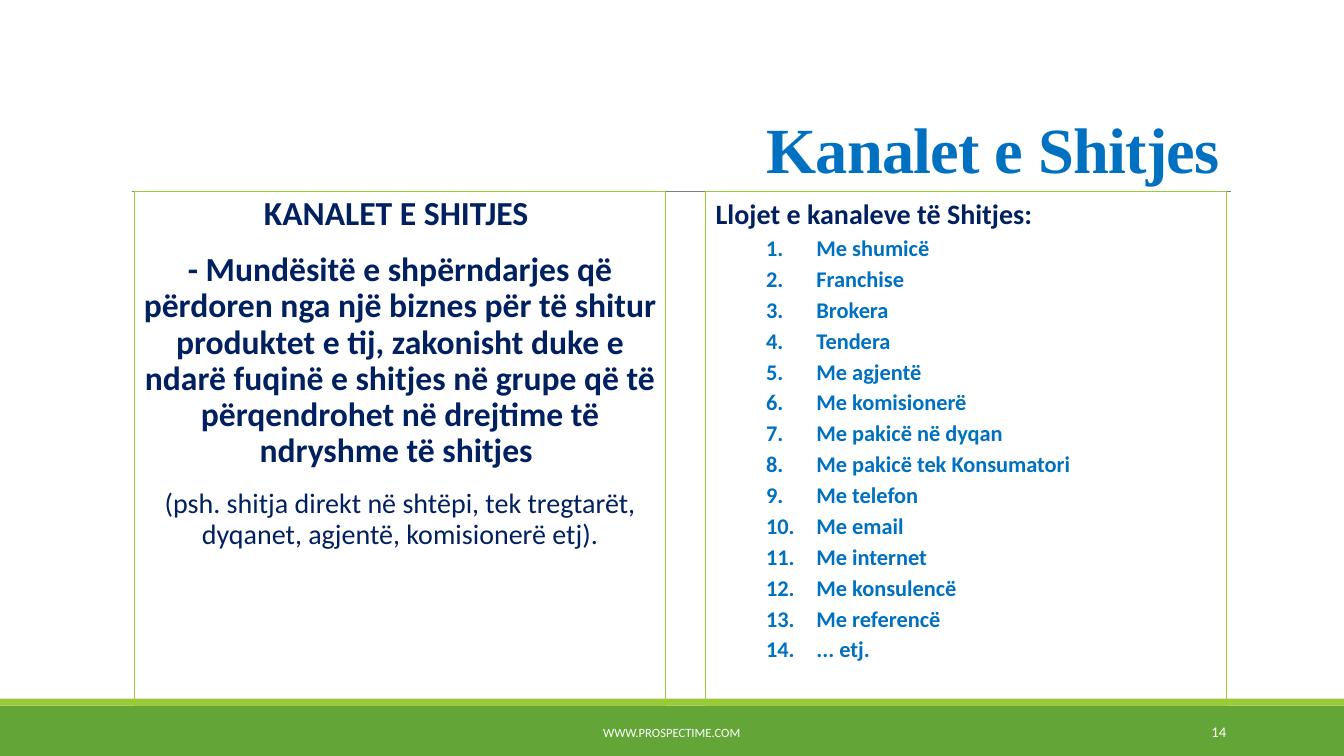
from dataclasses import dataclass
from typing import Optional

from lxml.etree import SubElement
from pptx import Presentation
from pptx.dml.color import RGBColor
from pptx.enum.shapes import MSO_CONNECTOR, MSO_SHAPE
from pptx.enum.text import MSO_ANCHOR, MSO_AUTO_SIZE, PP_ALIGN
from pptx.oxml.ns import qn
from pptx.util import Pt


@dataclass(frozen=True)
class Theme:
    white: str = "FFFFFF"
    green: str = "63A537"
    lime: str = "99CB38"
    gray: str = "808080"
    blue: str = "0070C0"
    navy: str = "002060"
    sans: str = "Calibri"
    serif: str = "Times New Roman"
    title: float = 46
    lead: float = 24
    body: float = 20
    item: float = 16
    page: float = 10.5
    foot: float = 9


@dataclass(frozen=True)
class Box:
    left: float
    top: float
    width: float
    height: float


@dataclass(frozen=True)
class Band:
    box: Box
    color: str


@dataclass(frozen=True)
class Para:
    text: str
    size: float
    color: str
    bold: bool = False
    align: PP_ALIGN = PP_ALIGN.LEFT
    font: str = Theme.sans
    line: float = 1.0
    before: float = 0
    after: float = 0
    number: bool = False


@dataclass(frozen=True)
class Note:
    box: Box
    para: Para


THEME = Theme()
WIDTH, HEIGHT = 960, 540
BANDS = [
    Band(Box(0, 504, WIDTH, 36), THEME.green),
    Band(Box(0, 499, WIDTH, 5), THEME.lime),
]
HEAD = Para("Kanalet e Shitjes", THEME.title, THEME.blue, True,
            PP_ALIGN.RIGHT, THEME.serif, 0.85)
LEFT = [
    Para(text, size, THEME.navy, bold, PP_ALIGN.CENTER,
         line=0.9, before=12 if row else 0, after=2)
    for row, (text, size, bold) in enumerate([
        ("KANALET E SHITJES ", THEME.lead, True),
        ("- Mundësitë e shpërndarjes që përdoren nga një biznes për të shitur "
         "produktet e tij, zakonisht duke e ndarë fuqinë e shitjes në grupe që "
         "të përqendrohet në drejtime të ndryshme të shitjes ", THEME.lead, True),
        ("(psh. shitja direkt në shtëpi, tek tregtarët, dyqanet, agjentë, "
         "komisionerë etj).", THEME.body, False),
    ])
]
KINDS = ["Me shumicë", "Franchise", "Brokera", "Tendera", "Me agjentë",
         "Me komisionerë", "Me pakicë në dyqan", "Me pakicë tek Konsumatori",
         "Me telefon", "Me email", "Me internet", "Me konsulencë",
         "Me referencë", "... etj."]
RIGHT = [Para("Llojet e kanaleve të Shitjes:", THEME.body, THEME.navy, True)] + [
    Para(kind, THEME.item, THEME.blue, True, before=2.85, number=True)
    for kind in KINDS
]
NOTES = [
    Note(Box(290, 508.5, 379.5, 28.8),
         Para("WWW.PROSPECTIME.COM", THEME.foot, THEME.white,
              align=PP_ALIGN.CENTER)),
    Note(Box(780, 508.5, 103, 28.8),
         Para("14", THEME.page, THEME.white, align=PP_ALIGN.RIGHT)),
]


def place(shape, box: Box) -> None:
    shape.left, shape.top = Pt(box.left), Pt(box.top)
    shape.width, shape.height = Pt(box.width), Pt(box.height)


def write(frame, paras: list[Para], anchor: MSO_ANCHOR,
          side: float = 7.2) -> None:
    frame.word_wrap = True
    frame.auto_size = MSO_AUTO_SIZE.NONE
    frame.vertical_anchor = anchor
    frame.margin_left = frame.margin_right = Pt(side)
    frame.margin_top = frame.margin_bottom = Pt(3.6)
    for row, para in enumerate(paras):
        line = frame.add_paragraph() if row else frame.paragraphs[0]
        line.text = para.text
        line.alignment = para.align
        line.line_spacing = para.line
        line.space_before = Pt(para.before)
        line.space_after = Pt(para.after)
        props = line._p.get_or_add_pPr()
        if para.number:
            line.level = 1
            props.set("marL", str(Pt(72)))
            props.set("indent", str(Pt(-36)))
            SubElement(props, qn("a:buFont"), typeface="+mj-lt")
            SubElement(props, qn("a:buAutoNum"), type="arabicPeriod")
        else:
            props.set("marL", "0")
            props.set("indent", "0")
            SubElement(props, qn("a:buNone"))
        font = line.font
        font.name, font.size, font.bold = para.font, Pt(para.size), para.bold
        font.color.rgb = RGBColor.from_string(para.color)


def frame_list(shape, box: Box, paras: list[Para], side: float) -> None:
    place(shape, box)
    shape.line.color.rgb = RGBColor.from_string(THEME.lime)
    shape.line.width = Pt(0.75)
    write(shape.text_frame, paras, MSO_ANCHOR.TOP, side)


def draw_band(slide, band: Band) -> None:
    shape = slide.shapes.add_shape(MSO_SHAPE.RECTANGLE, 0, 0, 0, 0)
    place(shape, band.box)
    shape.shadow.inherit = False
    shape.fill.solid()
    shape.fill.fore_color.rgb = RGBColor.from_string(band.color)
    shape.line.fill.background()


def draw_rule(slide) -> None:
    rule = slide.shapes.add_connector(
        MSO_CONNECTOR.STRAIGHT, Pt(94.5), Pt(136.8), Pt(879), Pt(136.8))
    rule.line.color.rgb = RGBColor.from_string(THEME.gray)
    rule.line.width = Pt(0.5)
    SubElement(rule._element.spPr, qn("a:effectLst"))


def draw_note(slide, note: Note) -> None:
    shape = slide.shapes.add_textbox(0, 0, 0, 0)
    place(shape, note.box)
    write(shape.text_frame, [note.para], MSO_ANCHOR.MIDDLE)


def main(name: Optional[str] = None) -> None:
    deck = Presentation()
    deck.slide_width, deck.slide_height = Pt(WIDTH), Pt(HEIGHT)
    slide = deck.slides.add_slide(deck.slide_layouts.get_by_name("Two Content"))
    title, left, right = list(slide.placeholders)
    for band in BANDS:
        draw_band(slide, band)
    draw_rule(slide)
    for shape in (title, left, right):
        slide.shapes._spTree.append(shape._element)
    place(title, Box(86.4, 22.5, 792, 114.3))
    write(title.text_frame, [HEAD], MSO_ANCHOR.BOTTOM)
    run = title.text_frame.paragraphs[0].runs[0]
    run._r.get_or_add_rPr().set("spc", "-50")
    frame_list(left, Box(96, 136.8, 379.5, 367.2), LEFT, 0)
    frame_list(right, Box(504, 136.8, 372, 367.2), RIGHT, 7.2)
    for note in NOTES:
        draw_note(slide, note)
    deck.save("out.pptx")


if __name__ == "__main__":
    main()
